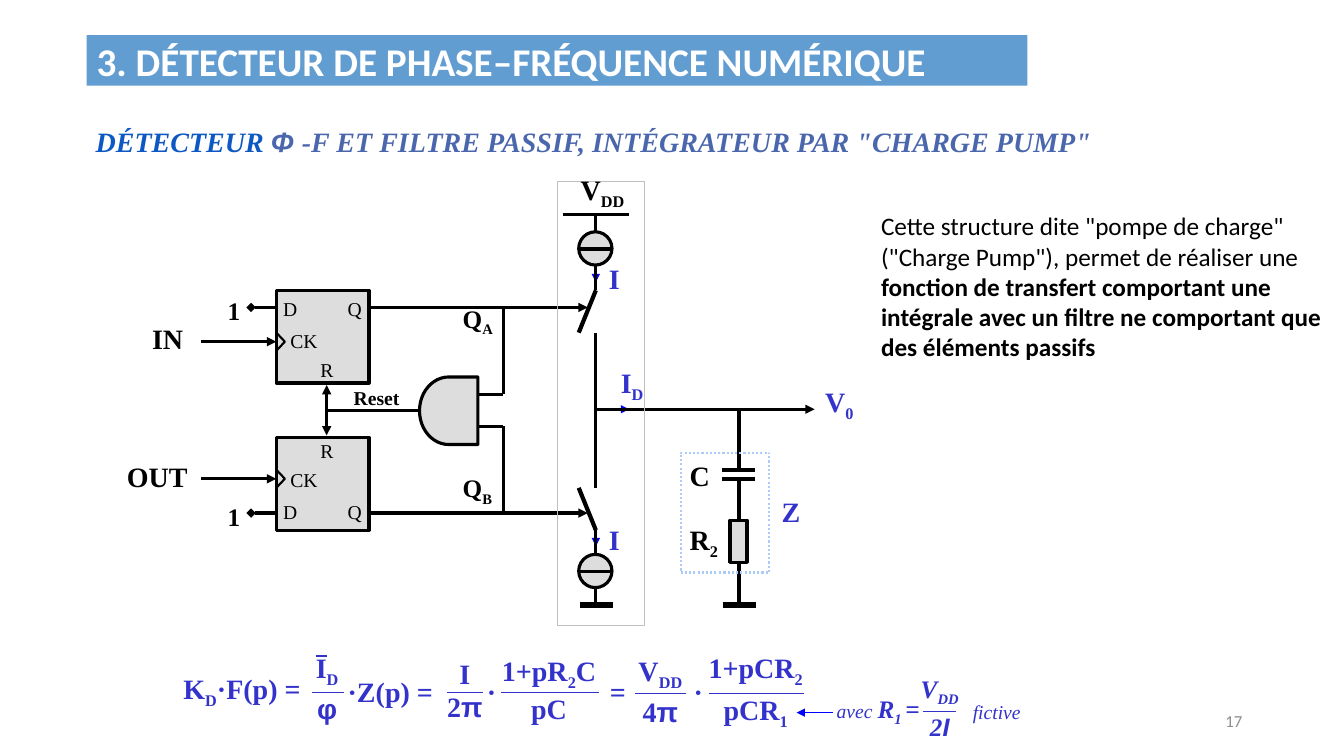
"""Build a slide on the charge pump phase-frequency detector."""
from pptx import Presentation, util as u
from pptx.dml.color import RGBColor
from pptx.enum import dml, shapes, text
from pptx.oxml.ns import qn
from lxml import etree

HUES = {"ink": "000000", "blue": "3333CC", "pure": "0000FF", "gray": "DDDDDD",
        "band": "629DD1", "white": "FFFFFF", "head": "4A66AC", "lead": "0E58C4",
        "dots": "ACCBF9", "edge": "BFBFBF", "page": "8C8C8C"}
HUES = {name: RGBColor.from_string(code) for name, code in HUES.items()}
KIND = shapes.MSO_SHAPE
LEFT, MID, RIGHT = text.PP_ALIGN.LEFT, text.PP_ALIGN.CENTER, text.PP_ALIGN.RIGHT

deck = Presentation()
deck.slide_width, deck.slide_height = u.Inches(13.33), u.Inches(7.5)
slide = deck.slides.add_slide(deck.slide_layouts[6])


def label(box, words, size=20, hue="ink", style="b", align=LEFT, font="Times New Roman", space=None):
    """Add a text box; | parts runs, _ marks a subscript; return the runs."""
    frame = slide.shapes.add_textbox(*map(u.Inches, box)).text_frame
    frame.word_wrap = True
    frame.vertical_anchor = text.MSO_ANCHOR.MIDDLE
    if align == LEFT:
        frame.margin_right = 0
    runs = []
    for row, line in enumerate(words.split("\n")):
        para = frame.add_paragraph() if row else frame.paragraphs[0]
        para.alignment, para.line_spacing = align, space
        for part in line.split("|"):
            run = para.add_run()
            run.text = part.lstrip("_")
            run.font.name = "Arial" if run.text.strip() in "ΦπφΙ" else font
            run.font.size, run.font.color.rgb = u.Pt(size), HUES[hue]
            run.font.bold, run.font.italic = "b" in style, "i" in style
            if part.startswith("_"):
                run._r.get_or_add_rPr().set("baseline", "-25000")
            runs.append(run)
    return runs


def wire(x1, y1, x2, y2, width=2.25, hue="ink", tail=None, head=None):
    """Add a straight line, with an end mark where one is named."""
    link = slide.shapes.add_connector(shapes.MSO_CONNECTOR.STRAIGHT, *map(u.Inches, (x1, y1, x2, y2)))
    link.line.width, link.line.color.rgb = u.Pt(width), HUES[hue]
    stroke = link.line._get_or_add_ln()
    for tag, mark in (("a:headEnd", head), ("a:tailEnd", tail)):
        if mark:
            etree.SubElement(stroke, qn(tag), type=mark)
    etree.SubElement(link._element.spPr, qn("a:effectLst"))


axis, rail, load = 4.07, 5.91, 7.33

wire(6.08, 4.06, 6.24, 4.06, 0.75, "pure", "triangle")
wire(rail, 5.36, rail, 5.42, 0.75, "pure", "triangle")
wire(rail, 2.63, rail, 2.8, 0.75, "pure", "triangle")
wire(5.58, 2.13, 6.24, 2.13)
wire(rail, 4.84, rail, 3.3)
wire(rail, 4.06, 8.08, 4.06, tail="triangle")
wire(load, 4.66, load, 4.05)
wire(load, 6, load, 4.75)
for y in (4.66, 4.75):
    wire(7.16, y, 7.49, y, 3)
for x in (rail, load):
    wire(x - 0.16, 6, x + 0.17, 6, 4.5)
wire(4.59, axis, 3.24, axis)
wire(3.24, 3.82, 3.24, 4.32, tail="triangle", head="triangle")
for side in (-1, 1):
    wire(rail, axis + side * 1.19, rail, axis + side * 1.94)
    wire(rail, axis + side * 1.19, 5.74, axis + side * 0.77, 3)
    wire(1.99, axis + side * 0.68, 2.74, axis + side * 0.68, tail="triangle")
    wire(2.74, axis + side * 1.02, 2.49, axis + side * 1.02, tail="diamond")
    wire(3.66, axis + side * 1.02, 5.83, axis + side * 1.02, tail="triangle")
    wire(4.74, axis + side * 0.16, 4.99, axis + side * 0.16)
    wire(4.99, axis + side * 0.16, 4.99, axis + side * 1.02)

parts = [(KIND.RECTANGLE, 0.86, 0.35, 9.33, 0.5, "band", None, 0, 0),
         (KIND.RECTANGLE, 7.24, 5.16, 0.17, 0.42, "gray", "ink", 2.25, 0),
         (KIND.FLOWCHART_DELAY, 4.16, 3.74, 0.58, 0.67, "gray", "ink", 2.25, 180),
         (KIND.RECTANGLE, 6.75, 4.49, 0.88, 1.19, None, "dots", 1.5, 0),
         (KIND.RECTANGLE, 5.53, 1.8, 0.86, 4.4, None, "edge", 0.25, 0)]
for side in (-1, 1):
    parts += [(KIND.OVAL, 5.74, axis + side * 1.6 - 0.17, 0.33, 0.33, "gray", "ink", 2.25, 0),
              (KIND.RECTANGLE, 2.74, axis + side * 0.73 - 0.46, 0.92, 0.92, "gray", "ink", 2.25, 0),
              (KIND.ISOSCELES_TRIANGLE, 2.7, axis + side * 0.68 - 0.04, 0.17, 0.08, None, "ink", 1.5, 90)]
for kind, x, y, w, h, fill, edge, width, turn in parts:
    part = slide.shapes.add_shape(kind, *map(u.Inches, (x, y, w, h)))
    part.shadow.inherit = False
    part.rotation = turn
    if fill:
        part.fill.solid()
        part.fill.fore_color.rgb = HUES[fill]
    else:
        part.fill.background()
    if edge:
        part.line.color.rgb, part.line.width = HUES[edge], u.Pt(width)
    else:
        part.line.fill.background()
    if edge == "dots":
        part.line.dash_style = dml.MSO_LINE.ROUND_DOT

for side in (-1, 1):
    wire(5.74, axis + side * 1.6, 6.08, axis + side * 1.6)
    for x, w, gap, sign, align in ((2.71, 0.34, 1.01, "D", LEFT), (3.35, 0.34, 1.01, "Q", LEFT),
                                   (2.64, 0.75, 0.69, "CK", MID), (3.08, 0.36, 0.4, "R", LEFT)):
        label((x, axis + side * gap - 0.17, w, 0.34), sign, 14, style="", align=align)
    label((2.16, axis + side * 1.02 - 0.17, 0.33, 0.4), "1", 18)

label((1.41, 3.14, 0.57, 0.43), "IN")
label((1.16, 4.51, 0.8, 0.43), "OUT")
label((4.49, 2.98, 0.55, 0.4), "Q|_A", 18)
label((4.49, 4.66, 0.51, 0.4), "Q|_B", 18)
label((3.41, 3.78, 0.66, 0.34), "Reset", 14)
label((5.6, 1.69, 0.75, 0.43), "V|_DD", align=MID)
label((6.74, 4.5, 0.55, 0.43), "C")
label((6.74, 5.16, 0.55, 0.43), "R|_2")
for x, y, w, sign in ((5.94, 2.55, 0.25, "I"), (5.94, 5.14, 0.25, "I"), (6.02, 3.6, 0.5, "I|_D"),
                      (7.95, 3.79, 0.75, "V|_0"), (7.65, 4.86, 0.39, "Z")):
    label((x, y, w, 0.43), sign, hue="blue", align=MID)

for x, y, w, h, ratio, size, style, space in (
        (3.01, 6.4, 0.47, 0.81, "I|_D\nφ", 20, "b", 1.1),
        (4.27, 6.46, 0.68, 0.77, "I\n2|π", 20, "b", None),
        (4.82, 6.45, 1.25, 0.77, "1+pR|_2|C\npC", 20, "b", None),
        (6.21, 6.42, 0.68, 0.83, "V|_DD\n4|π", 20, "b", 1.1),
        (6.87, 6.42, 1.25, 0.83, "1+pCR|_2\npCR|_1", 20, "b", 1.1),
        (8.98, 6.63, 0.68, 0.74, "V|_DD\n2|Ι", 18, "bi", 1.1)):
    label((x, y, w, h), ratio, size, "blue", style, MID, space=space)
for x, y, end in ((3.09, 6.87, 3.41), (4.43, 6.87, 4.79), (4.97, 6.87, 5.94),
                  (6.3, 6.88, 6.8), (7.03, 6.88, 7.97), (9.15, 7.06, 9.48)):
    wire(x, y, end, y, 1, "blue")
wire(3.13, 6.51, 3.24, 6.51, 1.5, "blue")
wire(8.26, 7.07, 7.9, 7.07, 1, "pure", "triangle")
for x, w, sign in ((1.72, 1.4, "K|_D|·F(p) ="), (3.35, 1.1, "·Z(p) ="), (4.73, 0.29, "·"),
                   (5.95, 0.36, "="), (6.78, 0.29, "·")):
    label((x, 6.64, w, 0.43), sign, hue="blue")
note = label((8.2, 6.85, 1.1, 0.4), "avec |R|_1 |=", 18, "blue", "bi")
note[0].font.size, note[0].font.bold = u.Pt(14), False
label((9.55, 6.9, 0.8, 0.33), "fictive", 14, "blue", "i")

label((0.86, 0.35, 9.33, 0.5), "3. DÉTECTEUR DE PHASE–FRÉQUENCE NUMÉRIQUE", 28, "white", font="Calibri")
title = label((0.85, 1.18, 10.3, 0.44),
              "DÉTECTEUR |Φ |-F ET FILTRE PASSIF, INTÉGRATEUR PAR \"CHARGE PUMP\"", 20, "head", "bi")
title[0].font.color.rgb = HUES["lead"]
body = label((8.64, 2.03, 4.69, 1.62),
             "Cette structure dite \"pompe de charge\" (\"Charge Pump\"), permet de réaliser une |"
             "fonction de transfert comportant une\n"
             "intégrale avec un filtre ne comportant que des éléments passifs", 18, font="Calibri")
body[0].font.bold = False
label((9.42, 6.95, 3, 0.4), "17", 12, "page", "", RIGHT, "Calibri")

deck.save("out.pptx")
